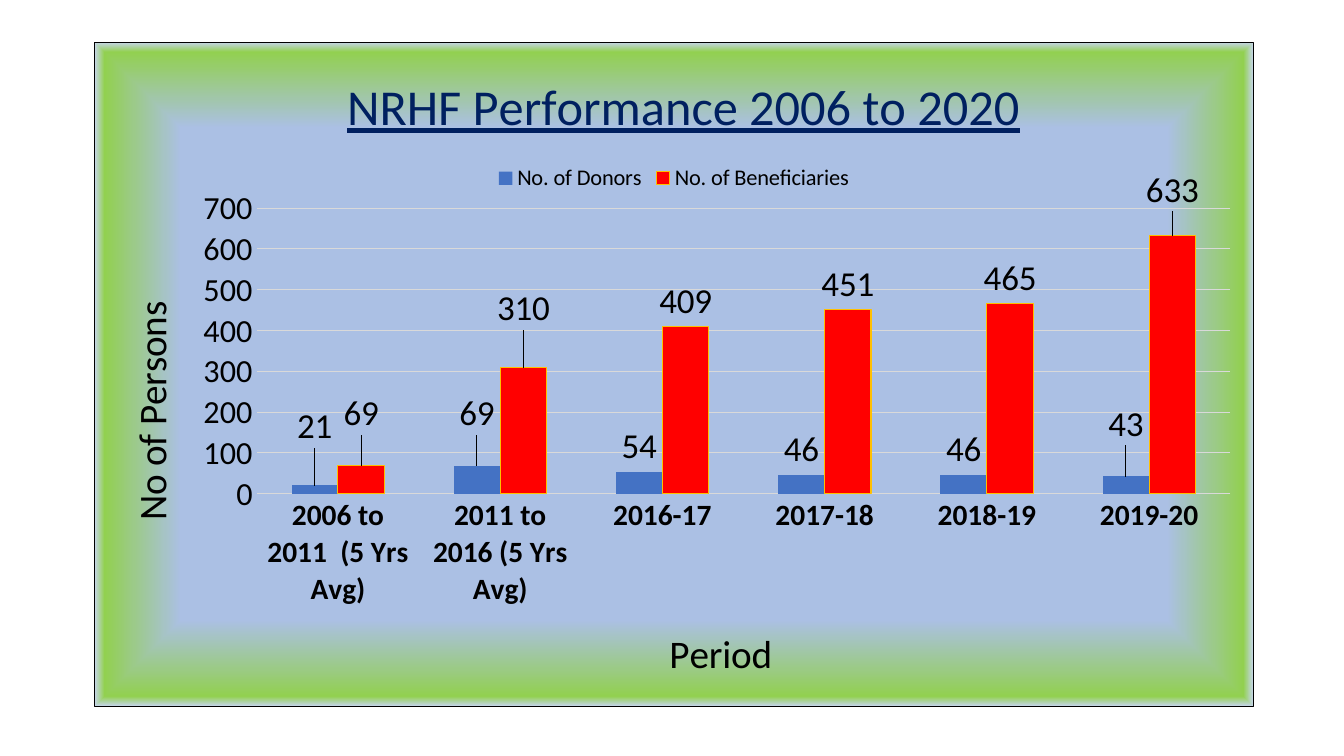
from lxml import etree
from pptx import Presentation
from pptx import util as u
from pptx.chart.data import CategoryChartData
from pptx.dml.color import RGBColor
from pptx.enum import chart as ce
from pptx.oxml import parse_xml
from pptx.oxml.ns import nsdecls, qn

COLORS = {"text": "000000", "title": "002060", "donors": "4472C4", "beneficiaries": "FF0000",
          "outline": "FFC000", "grid": "D9D9D9", "center": "ABC0E4", "frame": "92D050",
          "edge": "C7D5ED"}
PERIODS = ["2006 to 2011  (5 Yrs Avg)", "2011 to 2016 (5 Yrs Avg)",
           "2016-17", "2017-18", "2018-19", "2019-20"]
DONORS = [21, 69, 54, 46, 46, 43]
BENEFICIARIES = [69, 310, 409, 451, 465, 633]
# Upward label shifts by point index, as shares of the chart's height
DONOR_SHIFTS = {0: 0.05, 1: 0.04, 5: 0.04}
BENEFICIARY_SHIFTS = {0: 0.04, 1: 0.05, 5: 0.03}
NO_LEADER_LINES = (
    f'<c:extLst {nsdecls("c")}><c:ext uri="{{CE6537A1-D6FC-4f65-9D91-7224C49458BB}}" '
    'xmlns:c15="http://schemas.microsoft.com/office/drawing/2012/chart">'
    '<c15:showLeaderLines val="0"/></c:ext></c:extLst>')


class ChartSlide:
    """Holds the style and the slide; lengths are shares of the slide's size."""

    font = "Calibri"

    def __init__(self, presentation):
        self.width, self.height = presentation.slide_width, presentation.slide_height
        self.slide = presentation.slides.add_slide(presentation.slide_layouts[6])

    def color(self, name):
        return RGBColor.from_string(COLORS[name])

    def set_font(self, font, size, color="text", bold=False):
        font.name, font.size, font.bold = self.font, u.Pt(size), bold
        font.color.rgb = self.color(color)

    def place(self, parent, index, **settings):
        """Give a chart part a manual layout as its child number index."""
        for old in parent.findall(qn("c:layout")):
            parent.remove(old)
        layout = etree.Element(qn("c:layout"))
        manual = etree.SubElement(layout, qn("c:manualLayout"))
        for tag, value in settings.items():
            etree.SubElement(manual, qn(f"c:{tag}"), val=str(value))
        parent.insert(index, layout)

    def add_column_chart(self, left, top, width, height, data):
        frame = self.slide.shapes.add_chart(
            ce.XL_CHART_TYPE.COLUMN_CLUSTERED, int(left * self.width), int(top * self.height),
            int(width * self.width), int(height * self.height), data)
        self.chart = frame.chart
        self.set_font(self.chart.font, 10)
        plot = self.chart.plots[0]
        plot.gap_width, plot.overlap, plot.vary_by_categories = 150, 0, False

    def place_plot(self, x, y, w, h):
        plot_area = self.chart.element.find(qn("c:chart")).find(qn("c:plotArea"))
        self.place(plot_area, 0, layoutTarget="inner", xMode="edge", yMode="edge",
                   x=x, y=y, w=w, h=h)

    def add_title(self, owner, words, size, x, y, color="text", underline=None):
        """Title the chart or one of its axes."""
        title = owner.chart_title if owner is self.chart else owner.axis_title
        paragraph = title.text_frame.paragraphs[0]
        paragraph.text = words
        self.set_font(paragraph.font, size, color)
        paragraph.font.underline = underline
        self.place(title.element, 1, xMode="edge", yMode="edge", x=x, y=y)

    def style_axis(self, axis, size, bold=False):
        self.set_font(axis.tick_labels.font, size, bold=bold)
        axis.major_tick_mark = axis.minor_tick_mark = ce.XL_TICK_MARK.NONE
        axis.format.line.fill.background()

    def style_series(self, index, fill, shifts, outline=None):
        series = self.chart.plots[0].series[index]
        series.format.fill.solid()
        series.format.fill.fore_color.rgb = self.color(fill)
        if outline:
            series.format.line.color.rgb = self.color(outline)
            series.format.line.width = u.Pt(0.75)
        labels = series.data_labels
        labels.show_value = True
        labels.position = ce.XL_LABEL_POSITION.OUTSIDE_END
        self.set_font(labels.font, 25)
        labels_element = self.chart.element.xpath(f".//c:ser[{index + 1}]/c:dLbls")[0]
        for point, shift in shifts.items():
            label = series.points[point].data_label
            self.set_font(label.font, 25)
            label.position = ce.XL_LABEL_POSITION.OUTSIDE_END
            found = labels_element.xpath(f"c:dLbl[c:idx/@val='{point}']")[0]
            self.place(found, 1, x=0, y=-shift)
        labels_element.append(parse_xml(NO_LEADER_LINES))

    def add_legend(self):
        self.chart.has_legend = True
        legend = self.chart.legend
        legend.position, legend.include_in_layout = ce.XL_LEGEND_POSITION.TOP, False
        self.set_font(legend.font, 16)

    def fill_background(self, stops):
        """Give the chart a thin border and a gradient running from its center outward."""
        marks = "".join(f'<a:gs pos="{share * 1000}"><a:srgbClr val="{COLORS[name]}"/></a:gs>'
                        for share, name in stops)
        self.chart.element.find(qn("c:chart")).addnext(parse_xml(
            f'<c:spPr {nsdecls("c", "a")}><a:gradFill><a:gsLst>{marks}</a:gsLst>'
            '<a:path path="shape"><a:fillToRect l="50000" t="50000" r="50000" b="50000"/>'
            '</a:path></a:gradFill><a:ln w="9525"><a:solidFill>'
            f'<a:srgbClr val="{COLORS["text"]}"/></a:solidFill></a:ln></c:spPr>'))


def main():
    presentation = Presentation()
    presentation.slide_width, presentation.slide_height = u.Inches(13.33), u.Inches(7.5)
    page = ChartSlide(presentation)

    data = CategoryChartData()
    data.categories = PERIODS
    data.add_series("No. of Donors", DONORS)
    data.add_series("No. of Beneficiaries", BENEFICIARIES)
    page.add_column_chart(0.07, 0.055, 0.863, 0.88, data)
    chart = page.chart

    page.style_series(0, "donors", DONOR_SHIFTS)
    page.style_series(1, "beneficiaries", BENEFICIARY_SHIFTS, outline="outline")

    periods, persons = chart.category_axis, chart.value_axis
    page.style_axis(periods, 21, bold=True)
    page.style_axis(persons, 23)
    persons.minimum_scale, persons.maximum_scale, persons.major_unit = 0, 700, 100
    gridline = persons.major_gridlines.format.line
    gridline.color.rgb, gridline.width = page.color("grid"), u.Pt(0.75)

    page.add_title(chart, "NRHF Performance 2006 to 2020", 36, 0.21, 0.03, "title", True)
    page.add_title(periods, "Period", 28, 0.49, 0.87)
    page.add_title(persons, "No of Persons", 28, 0.02, 0.38)
    page.add_legend()
    page.place_plot(0.14, 0.25, 0.84, 0.43)
    page.fill_background([(0, "center"), (74, "center"), (97, "frame"), (100, "edge")])
    presentation.save("out.pptx")


if __name__ == "__main__":
    main()
